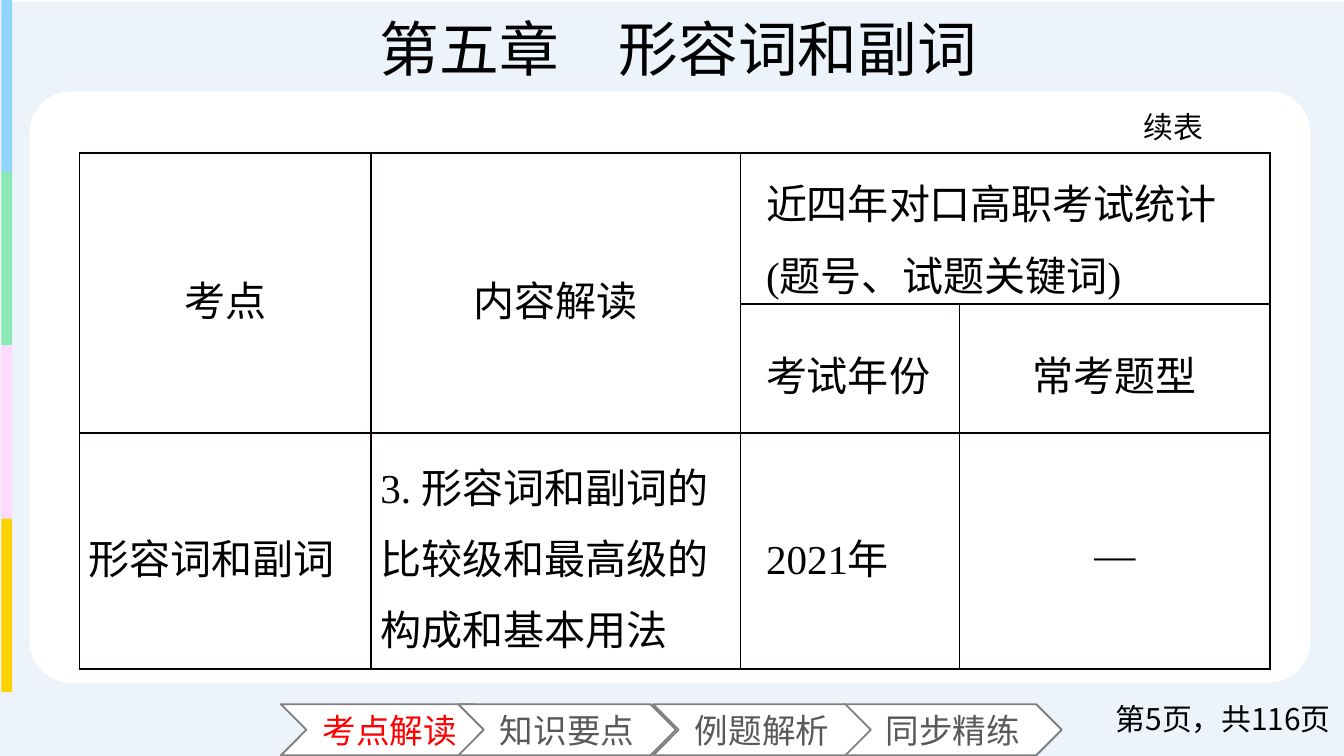
from dataclasses import dataclass

from lxml import etree
from pptx import Presentation
from pptx import util as u
from pptx.dml.color import RGBColor
from pptx.enum import shapes, text
from pptx.oxml import ns


@dataclass(frozen=True)
class Theme:
    backdrop: str = "ECF3FB"
    panel: str = "FFFFFF"
    outline: str = "808080"
    border: str = "080000"
    ink: str = "000000"
    active: str = "FF0000"
    idle: str = "595959"
    serif: str = "Times New Roman"
    sans: str = "Noto Sans CJK SC"
    title_size: int = 32
    table_size: int = 22
    tab_size: int = 18
    note_size: int = 16


THEME = Theme()
LEFT, CENTER, RIGHT = text.PP_ALIGN.LEFT, text.PP_ALIGN.CENTER, text.PP_ALIGN.RIGHT
TOP, MIDDLE = text.MSO_ANCHOR.TOP, text.MSO_ANCHOR.MIDDLE

WIDTH, HEIGHT = 10, 10 * 9 / 16
STRIPES = ["91D5FD", "8CE9B4", "FEDAFE", "FBD302"]
ACTIVE_TAB = ("考点解读", 2.09)
OTHER_TABS = [("同步精练", 6.28), ("知识要点", 3.41), ("例题解析", 4.86)]
LABELS = [
    ("第五章\u3000形容词和副词".replace("\u3000", "　"), (1.76, 0.04, 6.58, 0.64), CENTER, TOP, THEME.title_size, THEME.serif),
    ("续表", (8.41, 0.76, 0.89, 0.37), LEFT, TOP, THEME.note_size, THEME.sans),
    ("第5页，共116页", (7.97, 5.2, 2.03, 0.3), RIGHT, MIDDLE, THEME.note_size, THEME.sans),
]
LABELS[0] = ("第五章　形容词和副词", *LABELS[0][1:])
COLUMNS = [2.17, 2.75, 1.63, 2.31]
ROWS = [1.12, 0.96, 1.76]
MERGES = [((0, 0), (1, 0)), ((0, 1), (1, 1)), ((0, 2), (0, 3))]
ROOMY, TIGHT, HEADING = (0.19, 0.12, 0.12), (0.07, 0, 0), (0.19, 0.05, 0)
CELLS = {
    (0, 0): ("考点", CENTER, ROOMY),
    (0, 1): ("内容解读", CENTER, ROOMY),
    (0, 2): ("近四年对口高职考试统计(题号、试题关键词)", LEFT, HEADING),
    (1, 2): ("考试年份", LEFT, ROOMY),
    (1, 3): ("常考题型", CENTER, ROOMY),
    (2, 0): ("形容词和副词", LEFT, TIGHT),
    (2, 1): ("3. 形容词和副词的比较级和最高级的构成和基本用法", LEFT, TIGHT),
    (2, 2): ("2021年", LEFT, ROOMY),
    (2, 3): ("—", CENTER, ROOMY),
}


def apply(target, **values):
    for name, value in values.items():
        setattr(target, name, value)


def inches(values):
    return [u.Inches(value) for value in values]


def write(frame, words, align, size, face, color, spacing=None):
    paragraph = frame.paragraphs[0]
    apply(paragraph, alignment=align, line_spacing=spacing)
    run = paragraph.add_run()
    run.text = words
    apply(run.font, size=u.Pt(size), name=face)
    run.font.color.rgb = RGBColor.from_string(color)
    east_asian = etree.SubElement(run.font._element, ns.qn("a:ea"))
    east_asian.set("typeface", THEME.sans)


def add_block(slide, kind, box, fill, outline=None):
    block = slide.shapes.add_shape(kind, *inches(box))
    block.shadow.inherit = False
    block.fill.solid()
    block.fill.fore_color.rgb = RGBColor.from_string(fill)
    if outline:
        block.line.color.rgb = RGBColor.from_string(outline)
        block.line.width = u.Pt(1)
    else:
        block.line.fill.background()
    return block


def add_tab(slide, words, left, color):
    tab = add_block(slide, shapes.MSO_SHAPE.CHEVRON, (left, 5.24, 1.62, 0.38), THEME.panel, THEME.outline)
    apply(tab.text_frame, margin_left=0, margin_right=0, margin_top=0, margin_bottom=0,
          vertical_anchor=MIDDLE, word_wrap=False)
    write(tab.text_frame, words, CENTER, THEME.tab_size, THEME.sans, color)


def add_label(slide, words, box, align, anchor, size, face):
    label = slide.shapes.add_textbox(*inches(box))
    apply(label.text_frame, word_wrap=True, vertical_anchor=anchor)
    write(label.text_frame, words, align, size, face, THEME.ink)


def outline_cell(cell):
    properties = cell._tc.get_or_add_tcPr()
    for side in ("lnL", "lnR", "lnT", "lnB"):
        edge = etree.SubElement(properties, ns.qn(f"a:{side}"), w=str(u.Pt(1)))
        solid = etree.SubElement(edge, ns.qn("a:solidFill"))
        etree.SubElement(solid, ns.qn("a:srgbClr"), val=THEME.border)
    cell.fill.background()


def add_exam_table(slide):
    box = (0.59, 1.14, sum(COLUMNS), sum(ROWS))
    table = slide.shapes.add_table(len(ROWS), len(COLUMNS), *inches(box)).table
    apply(table, first_row=False, horz_banding=False)
    for column, width in zip(table.columns, COLUMNS):
        column.width = u.Inches(width)
    for row, height in zip(table.rows, ROWS):
        row.height = u.Inches(height)
    for cell in table.iter_cells():
        outline_cell(cell)
    for first, last in MERGES:
        table.cell(*first).merge(table.cell(*last))
    for place, (words, align, (side, top, bottom)) in CELLS.items():
        cell = table.cell(*place)
        apply(cell, vertical_anchor=MIDDLE, margin_left=u.Inches(side), margin_right=u.Inches(side),
              margin_top=u.Inches(top), margin_bottom=u.Inches(bottom))
        write(cell.text_frame, words, align, THEME.table_size, THEME.serif, THEME.ink, 1.2)


def main():
    deck = Presentation()
    apply(deck, slide_width=u.Inches(WIDTH), slide_height=u.Inches(HEIGHT))
    slide = deck.slides.add_slide(deck.slide_layouts[6])
    rectangle = shapes.MSO_SHAPE.RECTANGLE

    add_block(slide, rectangle, (-0.01, 0.01, 10.01, 5.62), THEME.backdrop)
    add_tab(slide, *ACTIVE_TAB, THEME.active)
    for index, color in enumerate(STRIPES):
        add_block(slide, rectangle, (0.01, -0.01 + 1.29 * index, 0.08, 1.29), color)
    panel = add_block(slide, shapes.MSO_SHAPE.ROUNDED_RECTANGLE, (0.22, 0.68, 9.53, 4.4), THEME.panel)
    panel.adjustments[0] = 0.07
    for words, left in OTHER_TABS:
        add_tab(slide, words, left, THEME.idle)
    add_exam_table(slide)
    for label in LABELS:
        add_label(slide, *label)

    deck.save("out.pptx")


if __name__ == "__main__":
    main()
